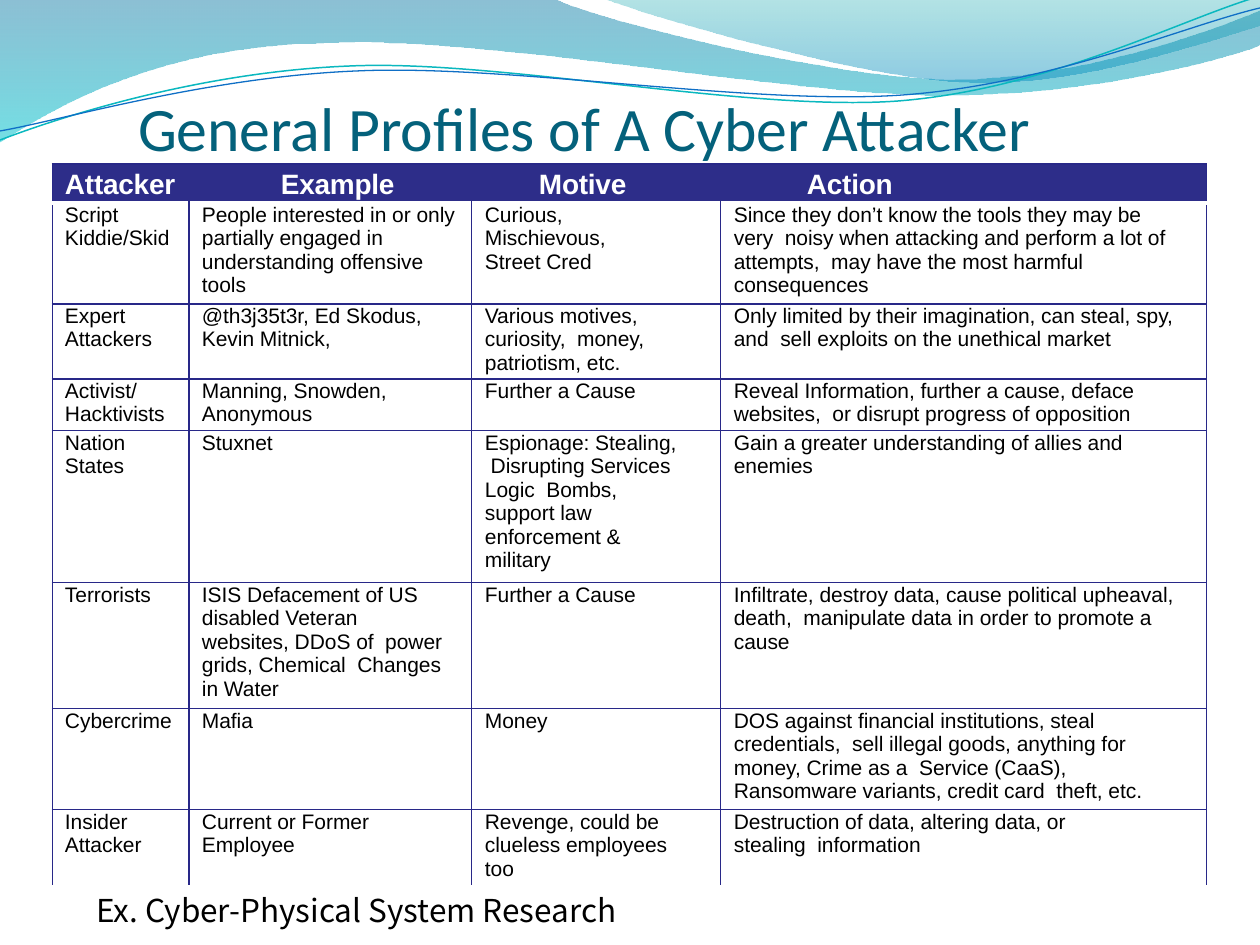
from dataclasses import dataclass
from typing import Optional

from lxml import etree
from pptx import Presentation
from pptx import util as u
from pptx.dml.color import RGBColor
from pptx.enum import text
from pptx.oxml import ns

PX_PER_INCH = 126
NAVY, WHITE, BLACK, TEAL = "282888", "FFFFFF", "000000", "04617B"
HEADER_FILL = "2D2D89"
HEADER_HEIGHT = 39
HEADER_TABS = (216, 474, 742)
COLUMN_WIDTHS = (137, 283, 249, 486)
CELL_INDENT = 13


@dataclass(frozen=True)
class Wave:
    start: tuple
    segments: tuple
    stops: tuple = ()
    line: Optional[str] = None
    width: float = 0


@dataclass(frozen=True)
class Profile:
    height: int
    entries: tuple
    right_margins: tuple = (10, 14, 40, 32)


WAVES = (
    Wave((0, 0), (
        (554, -1), (600, 21, 837, 79, 955, 79), (1075, 79, 1207, 33, 1260, 11),
        (1261, 45), (1239, 55, 1096, 96, 940, 95), (784, 95, 481, 35, 324, 43),
        (163, 45, 58, 105, -1, 142),
    ), stops=(("0074A1", 45), ("00C6CF", 55))),
    Wave((604, -1), (
        (641, 14, 859, 78, 969, 82), (1079, 87, 1211, 40, 1260, 26), (1260, 0),
    ), stops=(("00A1A9", 30), ("008BBF", 45))),
    Wave((0, 140), (
        (60, 117, 199, 72, 349, 66), (498, 59, 747, 112, 898, 101),
        (1049, 89, 1182, 19, 1257, -3),
    ), line="0AB8BF", width=0.85),
    Wave((0, 131), (
        (59, 121, 207, 77, 357, 71), (508, 64, 752, 106, 903, 95),
        (1053, 84, 1184, 26, 1260, 8),
    ), line="0F6FC6", width=0.75),
)

PROFILES = (
    Profile(101, (
        "Script Kiddie/Skid",
        "People interested in or only partially engaged in  understanding offensive tools",
        "Curious, Mischievous,  Street Cred",
        "Since they don’t know the tools they may be very  noisy when attacking and "
        "perform a lot of attempts,  may have the most harmful consequences",
    ), (10, 14, 75, 32)),
    Profile(75, (
        "Expert Attackers",
        "@th3j35t3r, Ed Skodus,  Kevin Mitnick,",
        "Various motives, curiosity,  money, patriotism, etc.",
        "Only limited by their imagination, can steal, spy, and  sell exploits "
        "on the unethical market",
    )),
    Profile(52, (
        "Activist/Hacktivists",
        "Manning, Snowden,  Anonymous",
        "Further a Cause",
        "Reveal Information, further a cause, deface websites,  or disrupt "
        "progress of opposition",
    )),
    Profile(152, (
        "Nation States",
        "Stuxnet",
        "Espionage: Stealing,  Disrupting Services Logic  Bombs, support law  "
        "enforcement & military",
        "Gain a greater understanding of allies and enemies",
    ), (10, 14, 40, 0)),
    Profile(126, (
        "Terrorists",
        "ISIS Defacement of US  disabled Veteran  websites, DDoS of  power grids, "
        "Chemical  Changes in Water",
        "Further a Cause",
        "Infiltrate, destroy data, cause political upheaval, death,  manipulate data "
        "in order to promote a cause",
    ), (10, 28, 40, 32)),
    Profile(101, (
        "Cybercrime",
        "Mafia",
        "Money",
        "DOS against financial institutions, steal credentials,  sell illegal goods, "
        "anything for money, Crime as a  Service (CaaS), Ransomware variants, "
        "credit card  theft, etc.",
    )),
    Profile(76, (
        "Insider Attacker",
        "Current or Former  Employee",
        "Revenge, could be  clueless employees too",
        "Destruction of data, altering data, or stealing  information",
    ), (10, 14, 40, 80)),
)


def px(length: float) -> int:
    return round(length * 914400 / PX_PER_INCH)


def color(value: str) -> RGBColor:
    return RGBColor.from_string(value)


def child(parent, tag: str, **attributes):
    return etree.SubElement(parent, ns.qn(tag), attributes)


def write(frame, content: str, *, size: float, font: str, fill: str, bold: bool = False,
          before: float = 0, spacing: int = 0, indent: int = 0, right: int = 0,
          tabs: tuple = ()) -> None:
    frame.word_wrap = True
    paragraph = frame.paragraphs[0]
    paragraph.alignment = text.PP_ALIGN.LEFT
    paragraph.space_before = u.Pt(before)
    properties = paragraph._p.get_or_add_pPr()
    properties.set("marL", str(px(indent)))
    properties.set("marR", str(px(right)))
    if tabs:
        stops = child(properties, "a:tabLst")
        for tab in tabs:
            child(stops, "a:tab", pos=str(px(tab)), algn="l")
    run = paragraph.add_run()
    run.text = content
    run.font.size = u.Pt(size)
    run.font.name = font
    run.font.bold = bold
    run.font.color.rgb = color(fill)
    run._r.get_or_add_rPr().set("spc", str(spacing))


def draw_wave(slide, wave: Wave) -> None:
    builder = slide.shapes.build_freeform(*map(px, wave.start))
    anchors = [tuple(map(px, segment[-2:])) for segment in wave.segments]
    builder.add_line_segments(anchors, close=bool(wave.stops))
    ribbon = builder.convert_to_shape()
    edges = list(ribbon._element.iter(ns.qn("a:lnTo")))
    for edge, segment in zip(edges, wave.segments):
        if len(segment) == 6:
            edge.tag = ns.qn("a:cubicBezTo")
            edge.remove(edge[0])
            for x, y in zip(segment[::2], segment[1::2]):
                child(edge, "a:pt", x=str(px(x) - ribbon.left), y=str(px(y) - ribbon.top))
    ribbon.shadow.inherit = False
    if wave.line:
        ribbon.fill.background()
        ribbon.line.color.rgb = color(wave.line)
        ribbon.line.width = u.Pt(wave.width)
        return
    ribbon.line.fill.background()
    ribbon.fill.gradient()
    ribbon.fill.gradient_angle = 270
    for position, (stop, (shade, opacity)) in enumerate(zip(ribbon.fill.gradient_stops, wave.stops)):
        stop.position = position
        stop.color.rgb = color(shade)
        child(stop._gs[0], "a:alpha", val=str(opacity * 1000))


def format_cell(cell, borders: dict, fill: Optional[str] = None, top: int = 0) -> None:
    cell.margin_left = cell.margin_right = cell.margin_bottom = 0
    cell.margin_top = px(top)
    properties = cell._tc.get_or_add_tcPr()
    for side in "LRTB":
        if side in borders:
            shade, width = borders[side]
            edge = child(properties, f"a:ln{side}", w=str(u.Pt(width)))
            child(child(edge, "a:solidFill"), "a:srgbClr", val=shade)
    if fill:
        cell.fill.solid()
        cell.fill.fore_color.rgb = color(fill)
    else:
        cell.fill.background()


def draw_profiles(slide) -> None:
    heights = (HEADER_HEIGHT, *(profile.height for profile in PROFILES))
    table = slide.shapes.add_table(
        len(heights), len(COLUMN_WIDTHS), px(52), px(164),
        px(sum(COLUMN_WIDTHS)), px(sum(heights))).table
    table.first_row = table.horz_banding = False
    for column, width in zip(table.columns, COLUMN_WIDTHS):
        column.width = px(width)
    for row, height in zip(table.rows, heights):
        row.height = px(height)
    outer, inner, divider = (NAVY, 0.5), (NAVY, 0.75), (WHITE, 2.25)
    header = table.cell(0, 0)
    header.merge(table.cell(0, len(COLUMN_WIDTHS) - 1))
    for cell in table.rows[0].cells:
        format_cell(cell, {"L": outer, "R": outer, "T": inner, "B": divider}, HEADER_FILL, top=5)
    write(header.text_frame, "Attacker\tExample\tMotive\tAction", size=16, font="Arial",
          fill=WHITE, bold=True, before=3.4, spacing=-10, indent=CELL_INDENT, tabs=HEADER_TABS)
    last = len(COLUMN_WIDTHS) - 1
    for r, profile in enumerate(PROFILES, 1):
        for c, (entry, right) in enumerate(zip(profile.entries, profile.right_margins)):
            borders = {"L": inner if c else outer, "R": inner if c < last else outer,
                       "T": inner if r > 1 else divider}
            if r < len(PROFILES):
                borders["B"] = inner
            cell = table.cell(r, c)
            format_cell(cell, borders)
            write(cell.text_frame, entry, size=12, font="Arial", fill=BLACK, before=3.2,
                  spacing=-2, indent=CELL_INDENT, right=right)


def main() -> None:
    deck = Presentation()
    deck.slide_width, deck.slide_height = px(1260), px(945)
    slide = deck.slides.add_slide(deck.slide_layouts[5])
    for wave in WAVES:
        draw_wave(slide, wave)
    title = slide.shapes.title
    title.left, title.top, title.width, title.height = px(136), px(87), px(1029), px(77)
    frame = title.text_frame
    frame.margin_left = frame.margin_right = frame.margin_top = frame.margin_bottom = 0
    frame.vertical_anchor = text.MSO_ANCHOR.BOTTOM
    frame.auto_size = text.MSO_AUTO_SIZE.NONE
    write(frame, "General Profiles of A Cyber Attacker", size=35.3, font="Calibri", fill=TEAL,
          spacing=-2, indent=2)
    draw_profiles(slide)
    example = slide.shapes.add_textbox(px(84), px(885), px(683), px(50))
    write(example.text_frame, "Ex. Cyber-Physical System Research", size=18,
          font="Noto Sans CJK KR", fill=BLACK)
    deck.save("out.pptx")


if __name__ == "__main__":
    main()
